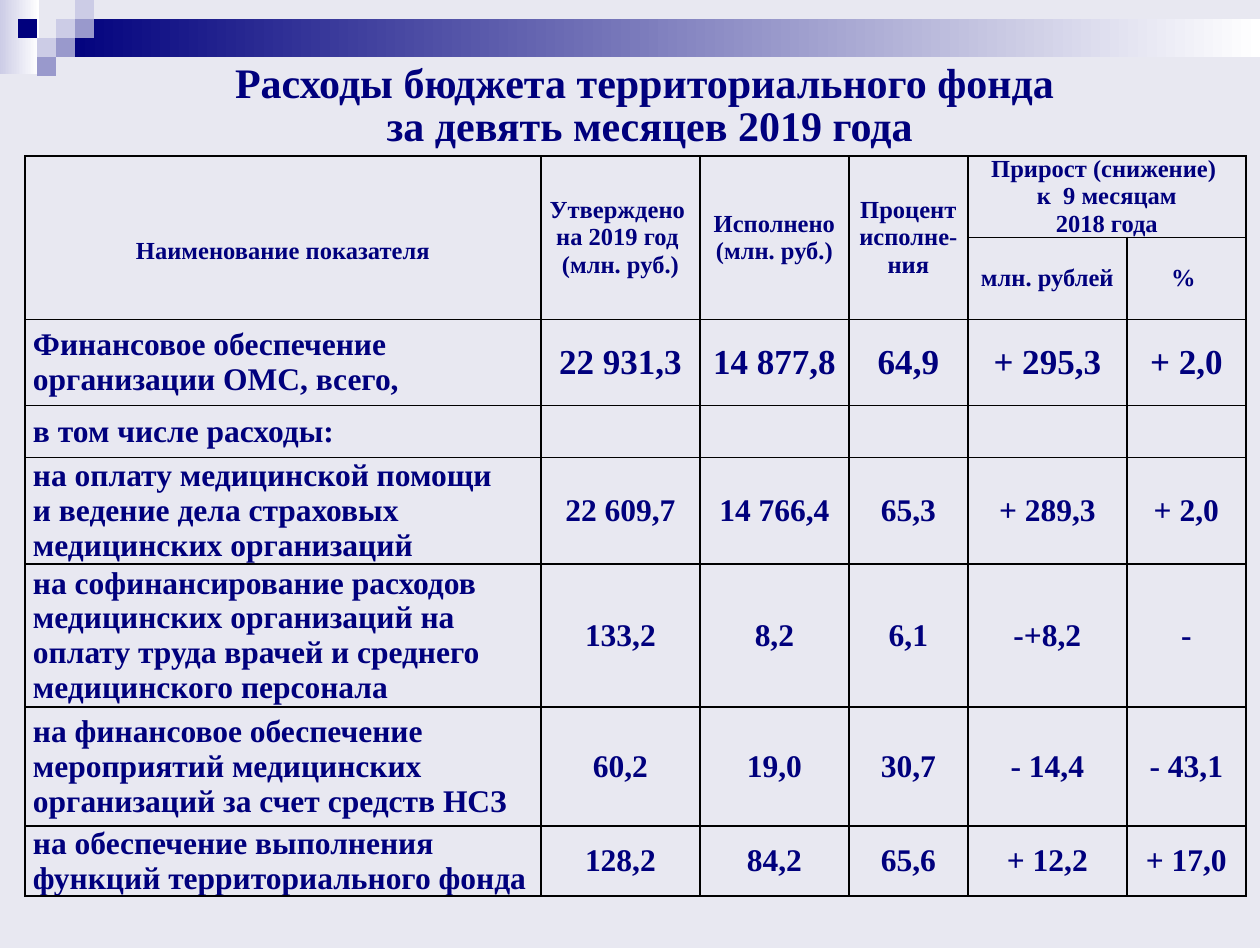
"""Build the slide with the nine-month spending table of the territorial fund."""
from dataclasses import dataclass

from lxml import etree
from pptx import Presentation
from pptx.dml.color import RGBColor
from pptx.enum.shapes import MSO_SHAPE
from pptx.enum.text import MSO_ANCHOR, MSO_AUTO_SIZE, PP_ALIGN
from pptx.oxml.ns import qn
from pptx.slide import Slide
from pptx.table import Table, _Cell
from pptx.text.text import TextFrame
from pptx.util import Emu, Pt

RECTANGLE = MSO_SHAPE.RECTANGLE
MIDDLE = MSO_ANCHOR.MIDDLE
NO_AUTOFIT = MSO_AUTO_SIZE.NONE
LEFT, CENTER = PP_ALIGN.LEFT, PP_ALIGN.CENTER

PX_PER_INCH = 126
FONT = "Times New Roman"
COLORS = {
    "background": "E8E8F1",
    "navy": "00007D",
    "lavender": "CCCCE6",
    "violet": "9999CC",
    "white": "FFFFFF",
    "border": "000000",
}
BORDER_WIDTH = Pt(1)
SIDE_MARGIN = 8
TILE = 19


@dataclass(frozen=True)
class Band:
    left: int
    top: int
    width: int
    height: int
    color: str


@dataclass(frozen=True)
class Tile:
    column: int
    row: int
    color: str


@dataclass(frozen=True)
class Heading:
    row: int
    column: int
    last_row: int
    last_column: int
    text: str
    top_margin: int = 0


@dataclass(frozen=True)
class Expense:
    name: str
    values: tuple[str, ...] = ()
    value_size: int = 18


BANDS = (
    Band(0, 0, 39, 74, "lavender"),
    Band(57, 19, 1203, 38, "navy"),
)
TILES = (
    Tile(3, 1, "lavender"),
    Tile(4, 0, "lavender"),
    Tile(4, 1, "violet"),
    Tile(2, 2, "lavender"),
    Tile(1, 1, "navy"),
    Tile(3, 2, "violet"),
    Tile(2, 3, "violet"),
)
TITLE = "Расходы бюджета территориального фонда\v за девять месяцев 2019 года"
COLUMN_WIDTHS = (516, 159, 149, 119, 159, 119)
ROW_HEIGHTS = (81, 82, 86, 52, 107, 143, 119, 70)
HEADINGS = (
    Heading(0, 0, 1, 0, "Наименование показателя", 27),
    Heading(0, 1, 1, 1, "Утверждено \nна 2019 год \n(млн. руб.)"),
    Heading(0, 2, 1, 2, "Исполнено\n(млн. руб.)"),
    Heading(0, 3, 1, 3, "Процент исполне-ния"),
    Heading(0, 4, 0, 5, "Прирост (снижение) \vк  9 месяцам\n2018 года"),
    Heading(1, 4, 1, 4, "млн. рублей"),
    Heading(1, 5, 1, 5, "% "),
)
EXPENSES = (
    Expense("Финансовое обеспечение организации ОМС, всего,",
            ("22 931,3", "14 877,8", "64,9", "+ 295,3", "+ 2,0"), 20),
    Expense("в том числе расходы:"),
    Expense("на оплату медицинской помощи \vи ведение дела страховых медицинских организаций",
            ("22 609,7", "14 766,4", "65,3", "+ 289,3", "+ 2,0")),
    Expense("на софинансирование расходов медицинских организаций на "
            "оплату труда врачей и среднего медицинского персонала",
            ("133,2", "8,2", "6,1", "-+8,2", "-")),
    Expense("на финансовое обеспечение мероприятий медицинских "
            "организаций за счет средств НСЗ",
            ("60,2", "19,0", "30,7", "- 14,4", "- 43,1")),
    Expense("на обеспечение выполнения функций территориального фонда",
            ("128,2", "84,2", "65,6", "+ 12,2", "+ 17,0")),
)


def px(length: int) -> Emu:
    """Convert pixels to EMU."""
    return Emu(round(length * 914400 / PX_PER_INCH))


def rgb(name: str) -> RGBColor:
    """Look up a palette colour."""
    return RGBColor.from_string(COLORS[name])


def write(frame: TextFrame, text: str, size: int, alignment: PP_ALIGN) -> None:
    """Set text and give every run the slide's lettering."""
    frame.text = text
    for paragraph in frame.paragraphs:
        paragraph.alignment = alignment
        for run in paragraph.runs:
            run.font.name = FONT
            run.font.size = Pt(size)
            run.font.bold = True
            run.font.color.rgb = rgb("navy")


def draw_rectangle(slide: Slide, band: Band, fades: bool) -> None:
    """Draw a plain rectangle, or one that fades to white."""
    rectangle = slide.shapes.add_shape(
        RECTANGLE, px(band.left), px(band.top), px(band.width), px(band.height))
    rectangle.shadow.inherit = False
    rectangle.line.fill.background()
    if fades:
        rectangle.fill.gradient()
        rectangle.fill.gradient_angle = 0
        for stop, color in zip(rectangle.fill.gradient_stops, (band.color, "white")):
            stop.color.rgb = rgb(color)
    else:
        rectangle.fill.solid()
        rectangle.fill.fore_color.rgb = rgb(band.color)


def draw_title(slide: Slide) -> None:
    """Place and format the slide title."""
    title = slide.shapes.title
    title.left, title.top, title.width, title.height = px(84), px(57), px(1121), px(100)
    frame = title.text_frame
    frame.word_wrap = True
    frame.auto_size = NO_AUTOFIT
    frame.vertical_anchor = MIDDLE
    write(frame, TITLE, 24, CENTER)
    frame.paragraphs[0].line_spacing = 0.85


def format_cell(cell: _Cell) -> None:
    """Clear the fill, set the margins and outline the cell."""
    cell.fill.background()
    cell.vertical_anchor = MIDDLE
    cell.margin_left = cell.margin_right = px(SIDE_MARGIN)
    cell.margin_top = cell.margin_bottom = 0
    properties = cell._tc.get_or_add_tcPr()
    for index, side in enumerate(("a:lnL", "a:lnR", "a:lnT", "a:lnB")):
        line = etree.Element(qn(side), w=str(BORDER_WIDTH))
        fill = etree.SubElement(line, qn("a:solidFill"))
        etree.SubElement(fill, qn("a:srgbClr"), val=COLORS["border"])
        properties.insert(index, line)


def fill_headings(table: Table) -> None:
    """Merge and write the header cells."""
    for heading in HEADINGS:
        cell = table.cell(heading.row, heading.column)
        last = table.cell(heading.last_row, heading.last_column)
        if (heading.row, heading.column) != (heading.last_row, heading.last_column):
            cell.merge(last)
        cell.margin_top = px(heading.top_margin)
        write(cell.text_frame, heading.text, 14, CENTER)


def draw_table(slide: Slide) -> None:
    """Draw the table of expenses."""
    table = slide.shapes.add_table(
        len(ROW_HEIGHTS), len(COLUMN_WIDTHS), px(25), px(156),
        px(sum(COLUMN_WIDTHS)), px(sum(ROW_HEIGHTS))).table
    table.first_row = table.horz_banding = False
    for column, width in zip(table.columns, COLUMN_WIDTHS):
        column.width = px(width)
    for row, height in zip(table.rows, ROW_HEIGHTS):
        row.height = px(height)
    for cell in table.iter_cells():
        format_cell(cell)
    fill_headings(table)
    for row, expense in enumerate(EXPENSES, start=2):
        write(table.cell(row, 0).text_frame, expense.name, 18, LEFT)
        for column, value in enumerate(expense.values, start=1):
            write(table.cell(row, column).text_frame, value, expense.value_size, CENTER)


def main() -> None:
    """Build and save the presentation."""
    presentation = Presentation()
    presentation.slide_width, presentation.slide_height = px(1260), px(948)
    slide = presentation.slides.add_slide(presentation.slide_layouts[5])
    slide.background.fill.solid()
    slide.background.fill.fore_color.rgb = rgb("background")
    for band in BANDS:
        draw_rectangle(slide, band, fades=True)
    for tile in TILES:
        square = Band(tile.column * TILE - 1, tile.row * TILE, TILE, TILE, tile.color)
        draw_rectangle(slide, square, fades=False)
    draw_title(slide)
    draw_table(slide)
    presentation.save("out.pptx")


if __name__ == "__main__":
    main()
